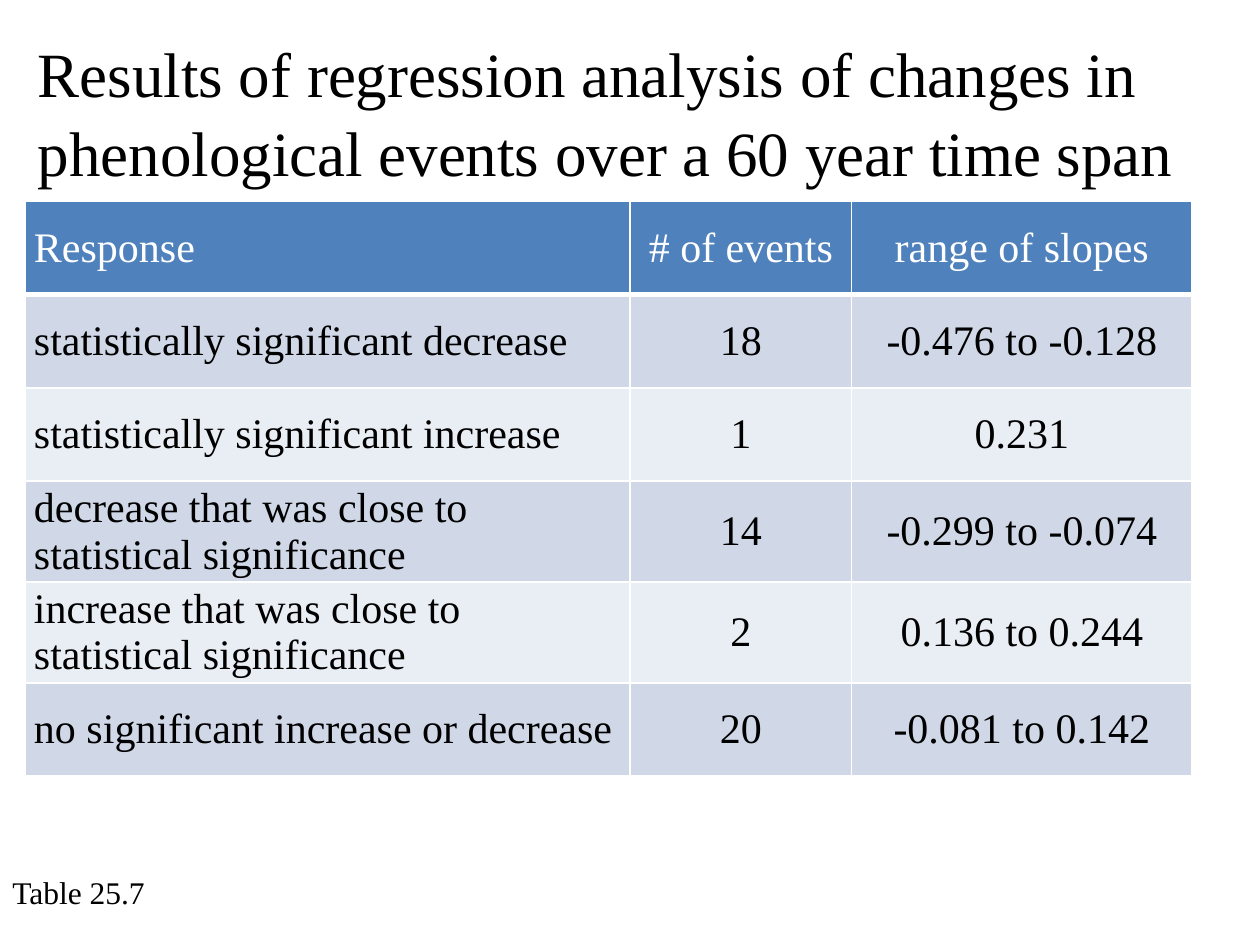
"""Build a slide with a table of regression results for phenological events."""
import lxml.etree
import pptx
import pptx.dml.color
import pptx.enum.text
import pptx.oxml.ns
import pptx.util

Inches = pptx.util.Inches
ALIGN = pptx.enum.text.PP_ALIGN
ANCHOR = pptx.enum.text.MSO_ANCHOR
BLACK = pptx.dml.color.RGBColor(0x00, 0x00, 0x00)
WHITE = pptx.dml.color.RGBColor(0xFF, 0xFF, 0xFF)
HEADER_BLUE = pptx.dml.color.RGBColor(0x4F, 0x81, 0xBD)
BAND_DARK = pptx.dml.color.RGBColor(0xD0, 0xD8, 0xE8)
BAND_LIGHT = pptx.dml.color.RGBColor(0xE9, 0xED, 0xF4)

FONT_NAME = "Times New Roman"
COLUMN_WIDTHS = (4.8, 1.76, 2.7)
ROW_HEIGHT = 0.74
RESULTS = (
    ("Response", "# of events", "range of slopes"),
    ("statistically significant decrease", "18", "-0.476 to -0.128"),
    ("statistically significant increase", "1", "0.231"),
    ("decrease that was close to statistical significance", "14", "-0.299 to -0.074"),
    ("increase that was close to statistical significance", "2", "0.136 to 0.244"),
    ("no significant increase or decrease", "20", "-0.081 to 0.142"),
)


def set_attributes(target, values):
    """Set each named attribute of the target."""
    for name, value in values.items():
        setattr(target, name, value)


def write_text(text_frame, text, size, color=BLACK, alignment=ALIGN.LEFT):
    """Write one formatted paragraph into a text frame."""
    paragraph = text_frame.paragraphs[0]
    paragraph.alignment = alignment
    run = paragraph.add_run()
    run.text = text
    set_attributes(run.font, {"name": FONT_NAME, "size": pptx.util.Pt(size), "bold": False})
    run.font.color.rgb = color
    return paragraph


def add_title(slide, text):
    """Place and fill the title placeholder."""
    title = slide.shapes.title
    set_attributes(title, {"left": Inches(0.2), "top": Inches(0.19),
                           "width": Inches(9.43), "height": Inches(1.31)})
    set_attributes(title.text_frame, {"word_wrap": True, "vertical_anchor": ANCHOR.TOP,
                                      "auto_size": pptx.enum.text.MSO_AUTO_SIZE.NONE})
    write_text(title.text_frame, text, 36).line_spacing = 1.05


def add_caption(slide, text):
    """Add the table number at the foot of the slide."""
    caption = slide.shapes.add_textbox(0, Inches(6.88), Inches(1.33), Inches(0.4))
    caption.text_frame.word_wrap = False
    write_text(caption.text_frame, text, 18)


def add_border(cell, side, width):
    """Add a solid white border to one side of a cell."""
    qualified = pptx.oxml.ns.qn
    properties = cell._tc.get_or_add_tcPr()
    line = lxml.etree.SubElement(properties, qualified(f"a:ln{side}"),
                                 w=str(pptx.util.Pt(width)))
    fill = lxml.etree.SubElement(line, qualified("a:solidFill"))
    lxml.etree.SubElement(fill, qualified("a:srgbClr"), val=str(WHITE))


def format_cell(cell, row_index):
    """Set the margins, borders and fill of a cell."""
    set_attributes(cell, {"margin_left": Inches(0.07), "margin_right": Inches(0.07),
                          "margin_top": 0, "margin_bottom": 0,
                          "vertical_anchor": ANCHOR.MIDDLE})
    widths = {"L": 1, "R": 1, "T": 3 if row_index == 1 else 1, "B": 3 if row_index == 0 else 1}
    for side, width in widths.items():
        add_border(cell, side, width)
    cell.fill.solid()
    band = BAND_DARK if row_index % 2 else BAND_LIGHT
    cell.fill.fore_color.rgb = band if row_index else HEADER_BLUE


def add_results_table(slide):
    """Add the table of responses, event counts and slopes."""
    table = slide.shapes.add_table(
        len(RESULTS), len(COLUMN_WIDTHS), Inches(0.2), Inches(1.6),
        Inches(sum(COLUMN_WIDTHS)), Inches(ROW_HEIGHT * len(RESULTS))).table
    for column, width in zip(table.columns, COLUMN_WIDTHS):
        column.width = Inches(width)
    for row_index, texts in enumerate(RESULTS):
        table.rows[row_index].height = Inches(ROW_HEIGHT)
        for column_index, text in enumerate(texts):
            cell = table.cell(row_index, column_index)
            format_cell(cell, row_index)
            write_text(cell.text_frame, text, 24, BLACK if row_index else WHITE,
                       ALIGN.CENTER if column_index else ALIGN.LEFT)


def main():
    """Create and save the presentation."""
    presentation = pptx.Presentation()
    set_attributes(presentation, {"slide_width": Inches(10), "slide_height": Inches(7.5)})
    slide = presentation.slides.add_slide(presentation.slide_layouts.get_by_name("Title Only"))
    add_title(slide, "Results of regression analysis of changes in "
                     "phenological events over a 60 year time span")
    add_caption(slide, "Table 25.7")
    add_results_table(slide)
    presentation.save("out.pptx")


if __name__ == "__main__":
    main()
